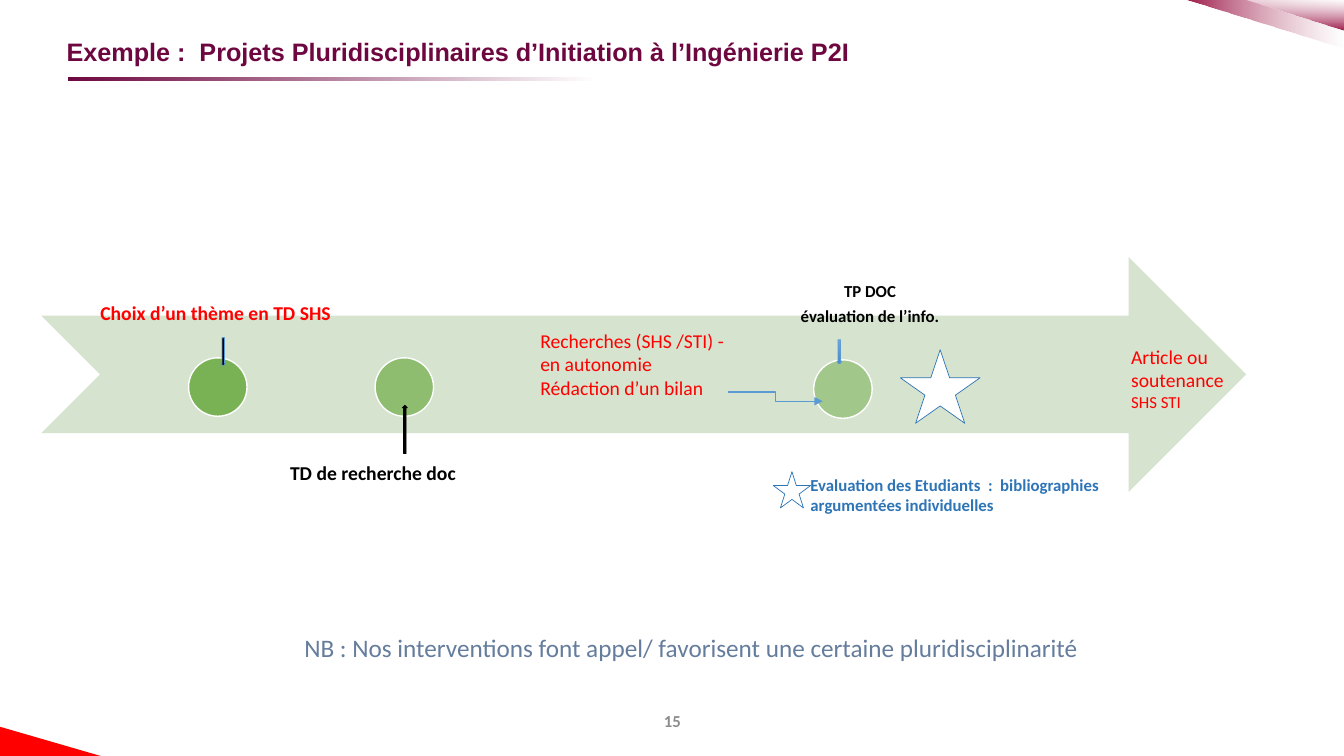
from lxml.etree import SubElement
from pptx import Presentation
from pptx.dml.color import RGBColor
from pptx.enum.shapes import MSO_CONNECTOR, MSO_SHAPE
from pptx.enum.text import MSO_ANCHOR, PP_ALIGN
from pptx.oxml.ns import qn
from pptx.util import Inches, Pt

COLORS = {
    "plum": "6E0740",
    "crimson": "9D1747",
    "red": "FF0000",
    "white": "FFFFFF",
    "black": "000000",
    "pale_green": "D5E3CF",
    "green": "70AD47",
    "sky": "5B9BD5",
    "light_sky": "71A6DB",
    "deep_sky": "448ACA",
    "blue": "2E75B6",
    "slate": "657D9D",
    "gray": "8C8C8C",
}


def color(name):
    return RGBColor.from_string(COLORS[name])


def set_alpha(element, percent):
    SubElement(element, qn("a:alpha")).set("val", str(percent * 1000))


def write(paragraph, text, font="Calibri", size=14, fill="black", bold=False):
    run = paragraph.add_run()
    run.text = text
    run.font.name = font
    run.font.size = Pt(size)
    run.font.bold = bold
    run.font.color.rgb = color(fill)


class SlideBuilder:
    def __init__(self, presentation):
        self.slide = presentation.slides.add_slide(presentation.slide_layouts[5])
        self.shapes = self.slide.shapes

    def paint(self, shape, fill, line=None, line_width=0.5, alpha=100):
        shape.shadow.inherit = False
        shape.fill.solid()
        shape.fill.fore_color.rgb = color(fill)
        if alpha < 100:
            set_alpha(shape._element.spPr.find(".//" + qn("a:srgbClr")), alpha)
        if line:
            shape.line.color.rgb = color(line)
            shape.line.width = Pt(line_width)
        else:
            shape.line.fill.background()

    def fade(self, shape, start, end, angle=0, end_alpha=100):
        shape.fill.gradient()
        shape.fill.gradient_angle = angle
        for stop, name in zip(shape.fill.gradient_stops, (start, end)):
            stop.color.rgb = color(name)
        if end_alpha < 100:
            gradient = shape._element.spPr.find(qn("a:gradFill"))
            set_alpha(gradient.findall(".//" + qn("a:srgbClr"))[-1], end_alpha)

    def shape(self, kind, left, top, width, height, fill, **style):
        shape = self.shapes.add_shape(
            kind, Inches(left), Inches(top), Inches(width), Inches(height))
        self.paint(shape, fill, **style)
        return shape

    def corner(self, points, fill):
        start, *others = [(Inches(x), Inches(y)) for x, y in points]
        builder = self.shapes.build_freeform(*start)
        builder.add_line_segments(others)
        shape = builder.convert_to_shape()
        self.paint(shape, fill)
        return shape

    def title(self, text, left, top, width, height, **style):
        title = self.shapes.title
        title.left, title.top = Inches(left), Inches(top)
        title.width, title.height = Inches(width), Inches(height)
        frame = title.text_frame
        frame.margin_left = Inches(0.1)
        frame.margin_right = frame.margin_top = frame.margin_bottom = 0
        frame.vertical_anchor = MSO_ANCHOR.MIDDLE
        paragraph = frame.paragraphs[0]
        paragraph.alignment = PP_ALIGN.LEFT
        paragraph.line_spacing = 0.9
        write(paragraph, text, **style)

    def text(self, lines, left, top, width, height, anchor=MSO_ANCHOR.TOP,
             align=PP_ALIGN.LEFT, **style):
        box = self.shapes.add_textbox(
            Inches(left), Inches(top), Inches(width), Inches(height))
        frame = box.text_frame
        frame.word_wrap = True
        frame.vertical_anchor = anchor
        for index, line in enumerate(lines):
            paragraph = frame.add_paragraph() if index else frame.paragraphs[0]
            paragraph.alignment = align
            write(paragraph, line, **style)
        return frame

    def step(self, lines, left, top, margin=0.11, **style):
        frame = self.text(lines, left, top, 3.46, 2.33,
                          align=PP_ALIGN.CENTER, bold=True, **style)
        frame.margin_left = frame.margin_right = Inches(margin)
        frame.margin_top = frame.margin_bottom = Inches(margin)
        for paragraph in frame.paragraphs:
            paragraph.line_spacing = 0.9
            paragraph.space_after = Pt(5)

    def elbow(self, start, end, line):
        connector = self.shapes.add_connector(
            MSO_CONNECTOR.ELBOW, *[Inches(value) for value in (*start, *end)])
        connector.line.color.rgb = color(line)
        connector.line.width = Pt(1)
        properties = connector._element.spPr
        SubElement(properties.find(qn("a:ln")), qn("a:tailEnd")).set("type", "triangle")
        SubElement(properties, qn("a:effectLst"))


def main():
    presentation = Presentation()
    presentation.slide_width = Inches(13.33)
    presentation.slide_height = Inches(7.5)
    builder = SlideBuilder(presentation)

    builder.corner([(0, 7.21), (1, 7.5), (0, 7.5)], "red")
    large_corner = builder.corner([(11.75, 0), (13.33, 0), (13.33, 0.48)], "crimson")
    builder.fade(large_corner, "crimson", "white", end_alpha=47)
    small_corner = builder.corner([(12.34, 0), (13.33, 0), (13.33, 0.3)], "crimson")
    builder.fade(small_corner, "crimson", "white", angle=90, end_alpha=57)
    title_rule = builder.shape(MSO_SHAPE.RECTANGLE, 0.67, 0.76, 5.25, 0.04, "plum")
    builder.fade(title_rule, "plum", "white")
    builder.title("Exemple :  Projets Pluridisciplinaires d’Initiation à l’Ingénierie P2I",
                  0.56, 0.37, 12, 0.31, font="Arial", size=18, fill="plum", bold=True)

    builder.shape(MSO_SHAPE.NOTCHED_RIGHT_ARROW, 0.41, 2.55, 11.95, 2.33, "pale_green")
    for left, top, alpha in ((1.87, 3.55, 90), (3.72, 3.55, 70), (8.07, 3.57, 50)):
        builder.shape(MSO_SHAPE.OVAL, left, top, 0.58, 0.58, "green",
                      line="white", line_width=1, alpha=alpha)
    builder.step(["Choix d’un thème en TD SHS"], 0.41, 1,
                 anchor=MSO_ANCHOR.BOTTOM, fill="red")
    builder.step(["TD de recherche doc"], 1.97, 4.49)
    builder.step(["TP DOC", "évaluation de l’info."], 6.9, 1, margin=0.09,
                 anchor=MSO_ANCHOR.BOTTOM, size=12)

    builder.text(["Recherches (SHS /STI) - en autonomie", "Rédaction d’un bilan"],
                 5.26, 3.21, 2.12, 0.81, fill="red")
    builder.elbow((7.22, 3.89), (8.16, 3.98), "sky")
    builder.shape(MSO_SHAPE.DOWN_ARROW, 2.19, 3.35, 0.05, 0.28, "black", line="sky")
    builder.shape(MSO_SHAPE.UP_ARROW, 3.99, 4.02, 0.05, 0.48, "black", line="black")
    review_arrow = builder.shape(MSO_SHAPE.DOWN_ARROW, 8.3, 3.37, 0.05, 0.24,
                                 "sky", line="sky")
    builder.fade(review_arrow, "light_sky", "deep_sky", angle=270)

    for left, top, width, height in ((8.93, 3.47, 0.79, 0.73), (7.67, 4.68, 0.37, 0.36)):
        builder.shape(MSO_SHAPE.STAR_5_POINT, left, top, width, height,
                      "white", line="blue")
    builder.text(["Evaluation des Etudiants  :  bibliographies  argumentées individuelles"],
                 7.94, 4.66, 3.55, 0.5, size=12, fill="blue", bold=True)

    outcome = builder.text(["Article ou soutenance"], 11.12, 3.37, 1.81, 0.77, fill="red")
    outcome.paragraphs[0].add_line_break()
    write(outcome.paragraphs[0], "SHS STI", size=12, fill="red")

    builder.text(["NB : Nos interventions font appel/ favorisent une certaine pluridisciplinarité"],
                 2.92, 6.22, 10.3, 0.71, size=18, fill="slate")
    builder.text(["15"], 4.42, 6.95, 4.5, 0.4, anchor=MSO_ANCHOR.MIDDLE,
                 align=PP_ALIGN.CENTER, size=12, fill="gray", bold=True)
    presentation.save("out.pptx")


if __name__ == "__main__":
    main()
